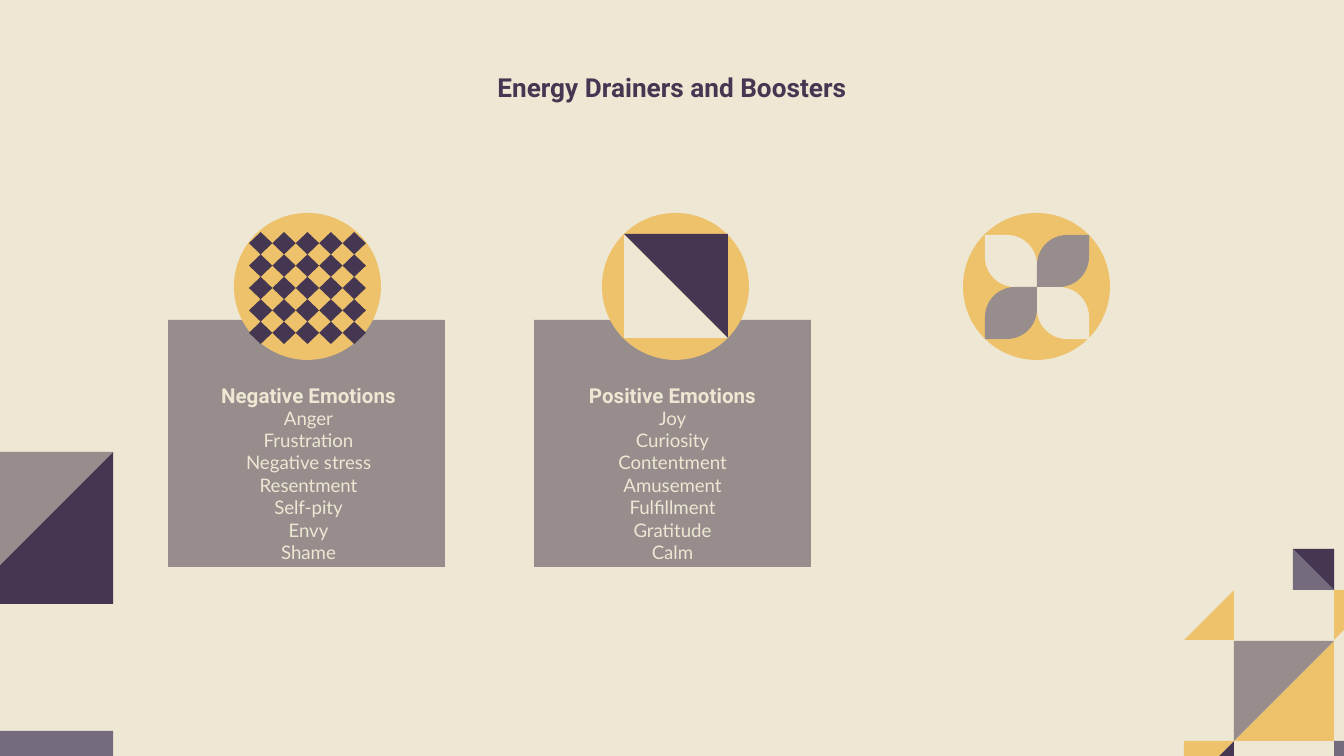
"""Builds the slide on negative and positive emotions as energy drainers and boosters."""
from dataclasses import dataclass
from math import cos, pi, sin

from pptx import Presentation
from pptx.dml.color import RGBColor
from pptx.enum.shapes import MSO_SHAPE
from pptx.enum.text import MSO_ANCHOR, PP_ALIGN
from pptx.shapes.autoshape import Shape
from pptx.util import Inches, Pt

RECTANGLE = MSO_SHAPE.RECTANGLE
OVAL = MSO_SHAPE.OVAL
TOP = MSO_ANCHOR.TOP
MIDDLE = MSO_ANCHOR.MIDDLE
BOTTOM = MSO_ANCHOR.BOTTOM
CENTER = PP_ALIGN.CENTER
WIDTH, HEIGHT = 1344, 756
SCALE = Inches(10) / WIDTH
Points = list[tuple[float, float]]


@dataclass(frozen=True)
class Theme:
    cream: str = "EDE7D3"
    plum: str = "453751"
    violet: str = "756B7E"
    taupe: str = "968D8C"
    gold: str = "EDC26B"
    heading_font: str = "Roboto"
    body_font: str = "Lato"
    title_size: int = 14
    heading_size: int = 11
    body_size: int = 10


@dataclass(frozen=True)
class Style:
    font: str
    size: int
    color: str
    bold: bool


@dataclass(frozen=True)
class Card:
    left: int
    text_left: int
    heading: str
    emotions: tuple[str, ...]


@dataclass(frozen=True)
class Tile:
    left: int
    top: int
    size: int
    upper: str
    lower: str
    rising: bool = True


@dataclass(frozen=True)
class Leaf:
    column: int
    row: int
    color: str


THEME = Theme()
TITLE = Style(THEME.heading_font, THEME.title_size, THEME.plum, True)
HEADING = Style(THEME.heading_font, THEME.heading_size, THEME.cream, True)
BODY = Style(THEME.body_font, THEME.body_size, THEME.cream, False)

CARDS = (
    Card(168, 170, "Negative Emotions",
         ("Anger", "Frustration", "Negative stress", "Resentment", "Self-pity", "Envy", "Shame")),
    Card(534, 534, "Positive Emotions",
         ("Joy", "Curiosity", "Contentment", "Amusement", "Fulfillment", "Gratitude", "Calm")),
)
MEDALLION_LEFTS = (234, 602, 963)
SPLIT_SQUARE = Tile(624, 234, 104, THEME.plum, THEME.cream, rising=False)
LEAVES = (
    Leaf(0, 0, THEME.cream), Leaf(1, 1, THEME.cream),
    Leaf(0, 1, THEME.taupe), Leaf(1, 0, THEME.taupe),
)
LEFT_TILES = (
    Tile(-39, 452, 152, THEME.taupe, THEME.plum),
    Tile(-39, 731, 152, THEME.violet, THEME.cream, rising=False),
)
CORNER_TILES = (
    Tile(1234, 641, 100, THEME.taupe, THEME.gold),
    Tile(1334, 590, 50, THEME.gold, THEME.cream),
    Tile(1184, 590, 50, THEME.cream, THEME.gold),
    Tile(1334, 741, 50, THEME.violet, THEME.plum),
    Tile(1293, 549, 41, THEME.plum, THEME.violet, rising=False),
    Tile(1184, 741, 50, THEME.gold, THEME.plum),
)


def emu(px: float) -> int:
    """Turn px into EMU."""
    return round(px * SCALE)


def paint(shape: Shape, color: str) -> None:
    """Give a shape a flat fill without line or shadow."""
    shape.shadow.inherit = False
    shape.fill.solid()
    shape.fill.fore_color.rgb = RGBColor.from_string(color)
    shape.line.fill.background()


def add_preset(shapes, kind: MSO_SHAPE, left: int, top: int, width: int, height: int, color: str) -> None:
    """Draw a flat preset shape."""
    paint(shapes.add_shape(kind, emu(left), emu(top), emu(width), emu(height)), color)


def add_outline(shapes, points: Points, color: str) -> None:
    """Draw a flat closed polygon."""
    start, *rest = [(emu(x), emu(y)) for x, y in points]
    builder = shapes.build_freeform(*start)
    builder.add_line_segments(rest)
    paint(builder.convert_to_shape(), color)


def add_text(shapes, left: int, top: int, width: int, height: int,
             lines: tuple[str, ...], style: Style, anchor: MSO_ANCHOR) -> None:
    """Place centred lines of text in one style."""
    frame = shapes.add_textbox(emu(left), emu(top), emu(width), emu(height)).text_frame
    frame.word_wrap = True
    frame.vertical_anchor = anchor
    frame.margin_left = frame.margin_right = frame.margin_top = frame.margin_bottom = Inches(0.1)
    frame.text = "\n".join(lines)
    for paragraph in frame.paragraphs:
        paragraph.alignment = CENTER
        for run in paragraph.runs:
            run.font.name = style.font
            run.font.size = Pt(style.size)
            run.font.bold = style.bold
            run.font.color.rgb = RGBColor.from_string(style.color)


def add_tile(shapes, tile: Tile) -> None:
    """Draw a square split along a diagonal into two triangles."""
    right, bottom = tile.left + tile.size, tile.top + tile.size
    top_left, top_right = (tile.left, tile.top), (right, tile.top)
    bottom_left, bottom_right = (tile.left, bottom), (right, bottom)
    if tile.rising:
        diagonal, above, below = [bottom_left, top_right], top_left, bottom_right
    else:
        diagonal, above, below = [top_left, bottom_right], top_right, bottom_left
    add_outline(shapes, [*diagonal, below], tile.lower)
    add_outline(shapes, [*diagonal, above], tile.upper)


def add_checks(shapes, left: int, top: int, width: int, height: int, count: int) -> None:
    """Draw columns of diamonds that touch at their tips."""
    column, step = width / count, height / (2 * count)
    for index in range(count):
        middle = left + (index + 0.5) * column
        levels = range(2 * count + 1)
        left_edge = [(middle - level % 2 * column / 2, top + level * step) for level in levels]
        right_edge = [(middle + level % 2 * column / 2, top + level * step) for level in levels]
        add_outline(shapes, left_edge + right_edge[-2:0:-1], THEME.plum)


def add_leaf(shapes, leaf: Leaf, left: int, top: int, size: int, radius: int) -> None:
    """Draw a square leaf rounded at two opposite corners."""
    steps = 12
    angles = [step * pi / 2 / steps for step in range(steps + 1)]
    lower = [(radius - radius * cos(a), size - radius + radius * sin(a)) for a in angles]
    upper = [(size - x, size - y) for x, y in lower]
    edge = [(0, 0), *lower, (size, size), *upper]
    mirrored = leaf.column != leaf.row
    x0, y0 = left + leaf.column * size, top + leaf.row * size
    add_outline(shapes, [(x0 + (size - x if mirrored else x), y0 + y) for x, y in edge], leaf.color)


def main() -> None:
    """Build and save the slide."""
    deck = Presentation()
    deck.slide_width, deck.slide_height = emu(WIDTH), emu(HEIGHT)
    slide = deck.slides.add_slide(deck.slide_layouts[6])
    slide.background.fill.solid()
    slide.background.fill.fore_color.rgb = RGBColor.from_string(THEME.cream)
    shapes = slide.shapes

    add_text(shapes, 422, 18, 500, 138, ("Energy Drainers and Boosters",), TITLE, MIDDLE)
    for card in CARDS:
        add_preset(shapes, RECTANGLE, card.left, 320, 277, 247, THEME.taupe)
        add_text(shapes, card.text_left, 348, 277, 72, (card.heading,), HEADING, BOTTOM)
        add_text(shapes, card.text_left + 10, 393, 257, 175, card.emotions, BODY, TOP)
    for left in MEDALLION_LEFTS:
        add_preset(shapes, OVAL, left, 213, 147, 147, THEME.gold)

    add_checks(shapes.add_group_shape().shapes, 249, 232, 117, 112, 5)
    add_tile(shapes.add_group_shape().shapes, SPLIT_SQUARE)
    flower = shapes.add_group_shape().shapes
    for leaf in LEAVES:
        add_leaf(flower, leaf, 985, 235, 52, 30)
    for tile in LEFT_TILES:
        add_tile(shapes, tile)
    corner = shapes.add_group_shape().shapes
    for tile in CORNER_TILES:
        add_tile(corner, tile)
    deck.save("out.pptx")


if __name__ == "__main__":
    main()
